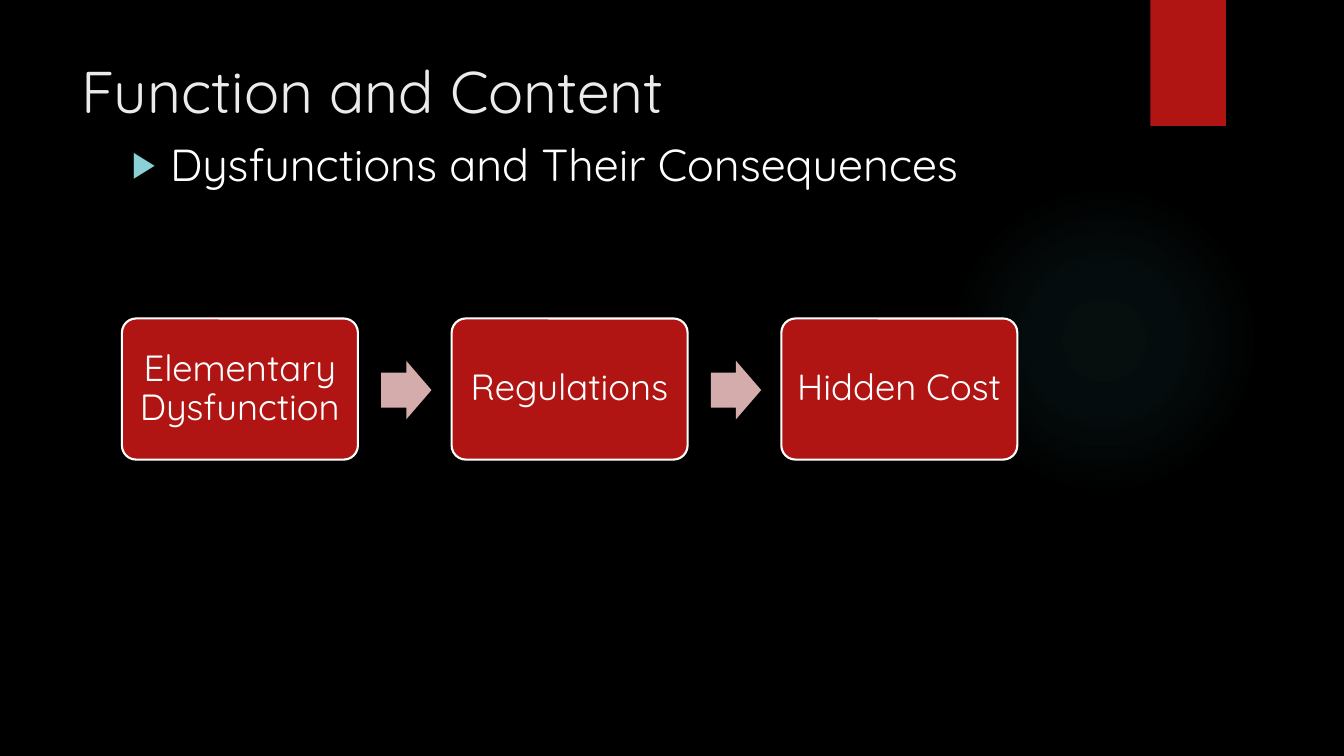
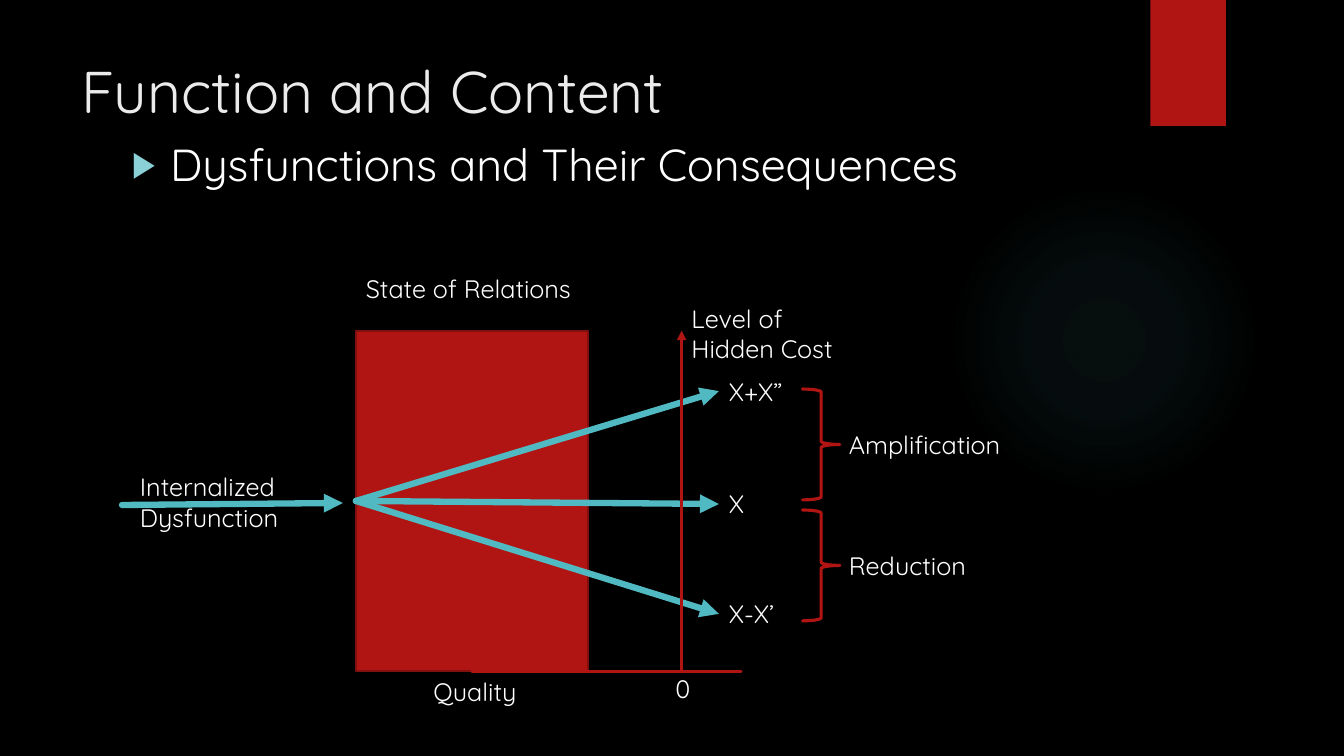
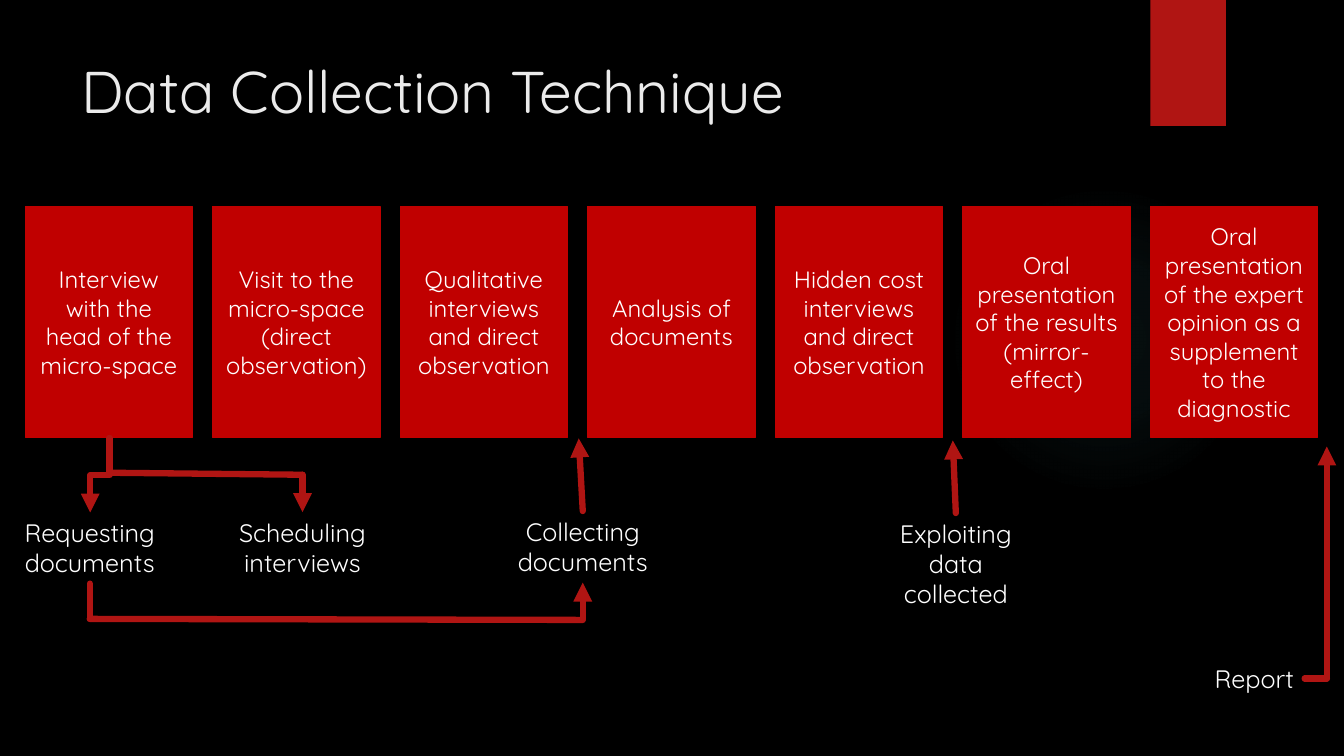
from dataclasses import dataclass
from typing import NamedTuple, Optional, Union

from lxml.etree import SubElement
from pptx import Presentation
from pptx.dml.color import RGBColor
from pptx.enum.shapes import MSO_CONNECTOR, MSO_SHAPE
from pptx.enum.text import MSO_ANCHOR, MSO_AUTO_SIZE, PP_ALIGN
from pptx.oxml import parse_xml
from pptx.oxml.ns import nsdecls, qn
from pptx.shapes.autoshape import Shape
from pptx.shapes.connector import Connector
from pptx.slide import Slide
from pptx.util import Inches, Pt

RED, CRIMSON, DARK_RED = "B01513", "C00000", "82100E"
TEAL, PINK, WHITE, OFF_WHITE, BLACK = "50B9C1", "D4ACAB", "FFFFFF", "EBEBEB", "000000"
BULLET_TEAL = "8AD0D6"
FONT = "Quicksand"
TOP, LEFT, BOTTOM = 0, 1, 2


class Box(NamedTuple):
    left: float
    top: float
    width: float
    height: float


class Point(NamedTuple):
    x: float
    y: float


class Side(NamedTuple):
    shape: Shape
    index: int


End = Union[Point, Side]


@dataclass
class Stroke:
    color: str
    width: float


@dataclass
class Label:
    text: str
    box: Box


FLOW = Stroke(TEAL, 4.5)
AXIS = Stroke(RED, 2.25)
ROUTE = Stroke(RED, 4.5)


def rgb(color: str) -> RGBColor:
    return RGBColor.from_string(color)


def inches(values: tuple) -> list:
    return [Inches(value) for value in values]


def write(shape: Shape, text: str, size: float, color: str = WHITE,
          align: PP_ALIGN = PP_ALIGN.LEFT) -> None:
    shape.text_frame.word_wrap = True
    paragraph = shape.text_frame.paragraphs[0]
    paragraph.text = text
    paragraph.alignment = align
    font = paragraph.runs[0].font
    for name, value in {"name": FONT, "size": Pt(size)}.items():
        setattr(font, name, value)
    font.color.rgb = rgb(color)


def add_text(slide: Slide, label: Label, size: float = 18, color: str = WHITE,
             align: PP_ALIGN = PP_ALIGN.LEFT) -> Shape:
    text_box = slide.shapes.add_textbox(*inches(label.box))
    write(text_box, label.text, size, color, align)
    return text_box


def add_label(slide: Slide, label: Label, align: PP_ALIGN = PP_ALIGN.LEFT) -> Shape:
    text_box = add_text(slide, label, align=align)
    text_box.text_frame.auto_size = MSO_AUTO_SIZE.SHAPE_TO_FIT_TEXT
    return text_box


def add_block(slide: Slide, kind: MSO_SHAPE, box: Box, fill: Optional[str] = None,
              outline: Optional[Stroke] = None) -> Shape:
    block = slide.shapes.add_shape(kind, *inches(box))
    block.shadow.inherit = False
    if fill:
        block.fill.solid()
        block.fill.fore_color.rgb = rgb(fill)
    else:
        block.fill.background()
    if outline:
        block.line.color.rgb = rgb(outline.color)
        block.line.width = Pt(outline.width)
    else:
        block.line.fill.background()
    return block


def add_block_text(block: Shape, text: str, size: float, margin: float) -> None:
    frame = block.text_frame
    values = {
        "margin_left": Inches(margin),
        "margin_right": Inches(margin),
        "vertical_anchor": MSO_ANCHOR.MIDDLE,
    }
    for name, value in values.items():
        setattr(frame, name, value)
    write(block, text, size, align=PP_ALIGN.CENTER)


def style_line(connector: Connector, stroke: Stroke, arrow: bool) -> None:
    connector.line.color.rgb = rgb(stroke.color)
    connector.line.width = Pt(stroke.width)
    outline = connector.line._get_or_add_ln()
    outline.set("cap", "rnd")
    if arrow:
        SubElement(outline, qn("a:tailEnd"), type="triangle")
    SubElement(connector._element.spPr, qn("a:effectLst"))


def add_link(slide: Slide, start: End, end: End, stroke: Stroke,
             arrow: bool = True) -> None:
    start_at, end_at = [
        item if isinstance(item, Point) else Point(0, 0) for item in (start, end)
    ]
    connector = slide.shapes.add_connector(
        MSO_CONNECTOR.STRAIGHT, *inches(start_at), *inches(end_at))
    if isinstance(start, Side):
        connector.begin_connect(start.shape, start.index)
    if isinstance(end, Side):
        connector.end_connect(end.shape, end.index)
    style_line(connector, stroke, arrow)


def add_glow(slide: Slide) -> None:
    glow = add_block(slide, MSO_SHAPE.OVAL, Box(9.41, 1.83, 3.08, 3.08))
    stops = "".join(
        f'<a:gs pos="{position * 1000}"><a:srgbClr val="{TEAL}">'
        f'<a:alpha val="{alpha * 1000}"/></a:srgbClr></a:gs>'
        for position, alpha in ((0, 7), (36, 6), (69, 0))
    )
    gradient = parse_xml(
        f'<a:gradFill {nsdecls("a")} rotWithShape="1"><a:gsLst>{stops}</a:gsLst>'
        '<a:path path="circle"><a:fillToRect l="50000" t="50000" r="50000" b="50000"/>'
        '</a:path></a:gradFill>')
    properties = glow._element.spPr
    properties.replace(properties.find(qn("a:noFill")), gradient)


def add_slide(deck: Presentation, title: str) -> Slide:
    slide = deck.slides.add_slide(deck.slide_layouts[6])
    add_glow(slide)
    add_block(slide, MSO_SHAPE.RECTANGLE, Box(11.41, 0, 0.75, 1.25), RED)
    add_text(slide, Label(title, Box(0.71, 0.49, 10.29, 0.81)), 42, OFF_WHITE)
    return slide


def add_function_slide(deck: Presentation) -> Slide:
    slide = add_slide(deck, "Function and Content")
    subject = slide.shapes.add_textbox(*inches(Box(1.21, 1.31, 9.78, 5.52)))
    properties = subject.text_frame.paragraphs[0]._p.get_or_add_pPr()
    properties.set("marL", str(Inches(0.38)))
    properties.set("indent", str(-Inches(0.38)))
    bullet_color = SubElement(properties, qn("a:buClr"))
    SubElement(bullet_color, qn("a:srgbClr"), val=BULLET_TEAL)
    SubElement(properties, qn("a:buSzPct"), val="80000")
    SubElement(properties, qn("a:buFont"), typeface="Arial")
    SubElement(properties, qn("a:buChar"), char="▶")
    write(subject, "Dysfunctions and Their Consequences", 32)
    return slide


def build_consequence_chain(deck: Presentation) -> None:
    slide = add_function_slide(deck)
    pitch = 3.27
    stages = ("Elementary Dysfunction", "Regulations", "Hidden Cost")
    for index, stage in enumerate(stages):
        offset = index * pitch
        card = add_block(slide, MSO_SHAPE.ROUNDED_RECTANGLE,
                         Box(1.21 + offset, 3.16, 2.34, 1.4), RED, Stroke(WHITE, 1.5))
        card.adjustments[0] = 0.1
        add_block_text(card, stage, 26, 0.1)
        card.text_frame.paragraphs[0].line_spacing = 0.9
        if index < len(stages) - 1:
            arrow = add_block(slide, MSO_SHAPE.RIGHT_ARROW,
                              Box(3.78 + offset, 3.58, 0.5, 0.58), PINK)
            arrow.adjustments[0] = 0.6


def build_cost_levels(deck: Presentation) -> None:
    slide = add_function_slide(deck)
    relations = add_block(slide, MSO_SHAPE.RECTANGLE, Box(3.53, 3.28, 2.3, 3.38),
                          RED, Stroke(DARK_RED, 1.5))
    for level, top in (("X+X”", 3.68), ("X-X’", 5.89), ("X", 4.8)):
        level_label = add_label(slide, Label(level, Box(7.13, top, 0.93, 0.4)))
        add_link(slide, Side(relations, LEFT), Side(level_label, LEFT), FLOW)
    add_link(slide, Side(relations, BOTTOM), Point(7.35, 6.66), AXIS, arrow=False)
    add_link(slide, Point(6.76, 6.66), Point(6.76, 3.28), AXIS)
    for effect, top in (("Amplification", 3.86), ("Reduction", 5.06)):
        brace = add_block(slide, MSO_SHAPE.RIGHT_BRACE, Box(7.96, top, 0.37, 1.1),
                          outline=AXIS)
        brace.line._get_or_add_ln().set("cap", "rnd")
        add_label(slide, Label(effect, Box(8.32, top + 0.35, 1.97, 0.4)))
    for label in (
        Label("Level of Hidden Cost", Box(6.76, 2.96, 1.97, 0.71)),
        Label("Internalized Dysfunction", Box(1.29, 4.63, 1.97, 0.71)),
        Label("State of Relations", Box(3.53, 2.66, 2.41, 0.4)),
        Label("0", Box(6.6, 6.63, 0.32, 0.4)),
        Label("Quality", Box(4.2, 6.66, 1.07, 0.4)),
    ):
        add_label(slide, label)
    add_link(slide, Point(1.21, 5.01), Point(3.4, 4.99), FLOW)


def build_data_collection(deck: Presentation) -> None:
    slide = add_slide(deck, "Data Collection Technique")
    steps = (
        "Interview with the head of the micro-space",
        "Visit to the micro-space (direct observation)",
        "Qualitative interviews and direct observation",
        "Analysis of documents",
        "Hidden cost interviews and direct observation",
        "Oral presentation of the results (mirror-effect)",
        "Oral presentation of the expert opinion as a supplement to the diagnostic",
    )
    for index, step in enumerate(steps):
        block = add_block(slide, MSO_SHAPE.RECTANGLE,
                          Box(0.25 + index * 1.86, 2.05, 1.66, 2.29),
                          CRIMSON, Stroke(CRIMSON, 0.75))
        add_block_text(block, step, 17, 0.1)

    requesting, scheduling, collecting, exploiting, _ = [
        add_label(slide, Label(text, Box(left, top, 1.78, height)), PP_ALIGN.CENTER)
        for text, left, top, height in (
            ("Requesting documents", 0, 5.08, 0.71),
            ("Scheduling interviews", 2.11, 5.08, 0.71),
            ("Collecting documents", 4.89, 5.07, 0.71),
            ("Exploiting data collected", 8.59, 5.09, 1.01),
            ("Report", 11.55, 6.53, 0.4),
        )
    ]

    request_route = slide.shapes.add_connector(
        MSO_CONNECTOR.ELBOW, *inches((0.62, 4.62, 1.36, 4.81)))
    request_route._element.spPr.find(qn("a:xfrm")).set("rot", "5400000")
    style_line(request_route, ROUTE, arrow=True)

    for start, end, arrow in (
        (Point(1.08, 4.69), Point(3, 4.71), False),
        (Point(3, 4.71), Side(scheduling, TOP), True),
        (Side(requesting, BOTTOM), Point(0.89, 6.14), False),
        (Point(0.89, 6.14), Point(5.78, 6.15), False),
        (Point(5.78, 6.14), Side(collecting, BOTTOM), True),
        (Side(collecting, TOP), Point(5.74, 4.35), True),
        (Side(exploiting, TOP), Point(9.45, 4.37), True),
        (Point(12.94, 6.73), Point(13.16, 6.73), False),
        (Point(13.16, 6.73), Point(13.16, 4.43), True),
    ):
        add_link(slide, start, end, ROUTE, arrow)


def main() -> None:
    deck = Presentation()
    deck.slide_width, deck.slide_height = Inches(13.33), Inches(7.5)
    backdrop = deck.slide_master.background.fill
    backdrop.solid()
    backdrop.fore_color.rgb = rgb(BLACK)
    build_consequence_chain(deck)
    build_cost_levels(deck)
    build_data_collection(deck)
    deck.save("out.pptx")


if __name__ == "__main__":
    main()
